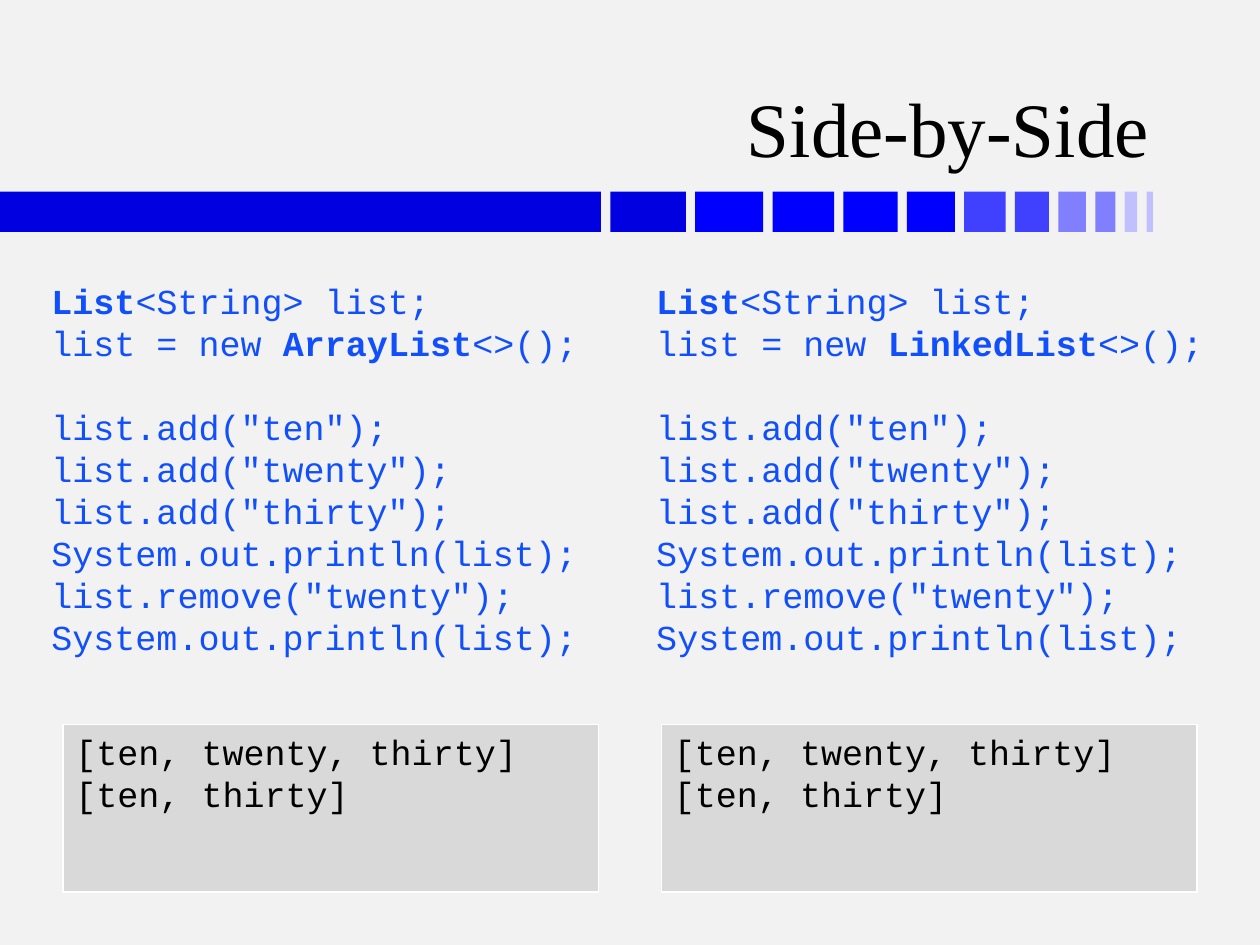
from dataclasses import dataclass

from pptx import Presentation
from pptx.dml.color import RGBColor
from pptx.enum.shapes import MSO_SHAPE as Shape
from pptx.enum.text import MSO_ANCHOR as Anchor, PP_ALIGN as Align
from pptx.util import Inches, Pt


@dataclass(frozen=True)
class Theme:
    back: str = "F2F2F2"
    ink: str = "000000"
    code: str = "114FFB"
    panel: str = "D9D9D9"
    edge: str = "FFFFFF"
    bar: tuple = ("0000E0", "0000FF", "0000FF", "4040FF", "8080FF", "C0C0FF")
    serif: str = "Times New Roman"
    mono: str = "Courier New"
    head: int = 44
    body: int = 20
    gap: int = 24


def rgb(value):
    return RGBColor.from_string(value)


class Deck:
    def __init__(self, theme):
        self.theme = theme
        self.prs = Presentation()
        self.prs.slide_width = Inches(10)
        self.prs.slide_height = Inches(7.5)
        self.slide = self.prs.slides.add_slide(self.prs.slide_layouts[6])
        fill = self.slide.background.fill
        fill.solid()
        fill.fore_color.rgb = rgb(theme.back)

    def rect(self, x, y, w, h, color, edge=None):
        box = self.slide.shapes.add_shape(
            Shape.RECTANGLE, Inches(x), Inches(y), Inches(w), Inches(h))
        box.shadow.inherit = False
        box.fill.solid()
        box.fill.fore_color.rgb = rgb(color)
        if edge:
            box.line.color.rgb = rgb(edge)
            box.line.width = Pt(1)
        else:
            box.line.fill.background()
        return box

    def text(self, x, y, w, h):
        return self.slide.shapes.add_textbox(
            Inches(x), Inches(y), Inches(w), Inches(h))

    def put(self, box, lines, font, size, color,
            align=Align.LEFT, anchor=Anchor.TOP):
        """Fill box with lines of (text, bold) runs; None opens a gap."""
        frame = box.text_frame
        frame.word_wrap = True
        frame.vertical_anchor = anchor
        para, gap = None, False
        for line in lines:
            if line is None:
                gap = True
                continue
            para = frame.add_paragraph() if para else frame.paragraphs[0]
            para.alignment = align
            if gap:
                para.space_before = Pt(self.theme.gap)
                gap = False
            for words, bold in line:
                run = para.add_run()
                run.text = words
                run.font.name = font
                run.font.size = Pt(size)
                run.font.bold = bold
                run.font.color.rgb = rgb(color)

    def title(self, words):
        box = self.text(0.74, 0.19, 8.48, 1.23)
        self.put(box, [[(words, False)]], self.theme.serif, self.theme.head,
                 self.theme.ink, Align.RIGHT, Anchor.BOTTOM)

    def bar(self):
        """Draw the fading bar, two blocks to a shade, with equal gaps."""
        sizes = (4.77, 0.6, 0.54, 0.49, 0.43, 0.38,
                 0.33, 0.27, 0.22, 0.16, 0.1, 0.05)
        gap = (9.15 - sum(sizes)) / (len(sizes) - 1)
        x = 0
        for i, w in enumerate(sizes):
            self.rect(x, 1.52, w, 0.32, self.theme.bar[i // 2])
            x += w + gap

    def code(self, x, w, lines):
        self.put(self.text(x, 2.17, w, 4.5), lines, self.theme.mono,
                 self.theme.body, self.theme.code)

    def result(self, x, lines):
        box = self.rect(x, 5.75, 4.25, 1.33, self.theme.panel, self.theme.edge)
        self.put(box, lines, self.theme.mono, self.theme.body,
                 self.theme.ink)


def plain(*lines):
    return [[(line, False)] for line in lines]


def listing(kind):
    show = "System.out.println(list);"
    return [
        [("List", True), ("<String> list;", False)],
        [("list = new ", False), (kind, True), ("<>();", False)],
        None,
        *plain('list.add("ten");', 'list.add("twenty");',
               'list.add("thirty");', show,
               'list.remove("twenty");', show),
    ]


def main():
    deck = Deck(Theme())
    deck.bar()
    deck.title("Side-by-Side")
    deck.code(0.31, 4.5, listing("ArrayList"))
    deck.code(5.11, 4.58, listing("LinkedList"))
    for x in (0.5, 5.25):
        deck.result(x, plain("[ten, twenty, thirty]", "[ten, thirty]"))
    deck.prs.save("out.pptx")


if __name__ == "__main__":
    main()
